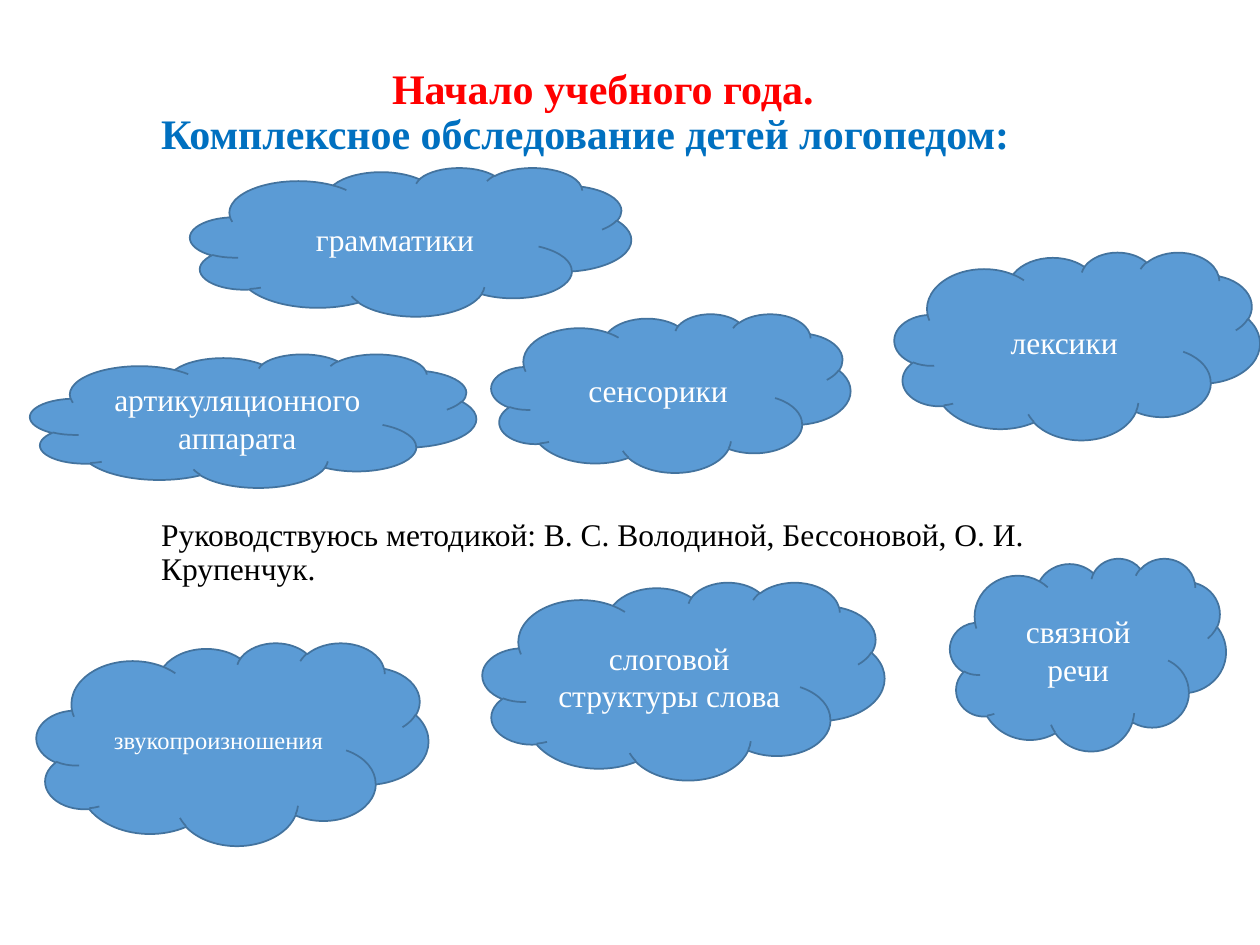
import pptx
import pptx.util
from pptx.dml.color import RGBColor
from pptx.enum.shapes import MSO_SHAPE
from pptx.enum.text import MSO_ANCHOR, PP_ALIGN

PX = 9144  # EMU per px, 100 px to the inch


class Theme:
    font = "Times New Roman"
    cloud_fill = "5B9BD5"
    cloud_line = "43739E"
    cloud_text = "FFFFFF"
    season = "FF0000"
    survey = "0070C0"
    body = "000000"
    heading_size = 24
    text_size = 18
    small_size = 14
    line_spacing = 0.9


def emu(box):
    return [length * PX for length in box]


def write(paragraph, text, size, color, bold=False, **layout):
    run = paragraph.add_run()
    run.text = text
    style = {"name": Theme.font, "size": pptx.util.Pt(size), "bold": bold}
    for key, value in style.items():
        setattr(run.font, key, value)
    run.font.color.rgb = RGBColor.from_string(color)
    for key, value in layout.items():
        setattr(paragraph, key, value)


def text_frame(slide, box):
    frame = slide.shapes.add_textbox(*emu(box)).text_frame
    frame.word_wrap = True
    return frame


def add_heading(slide, box):
    frame = text_frame(slide, box)
    write(frame.paragraphs[0], "Начало учебного года.", Theme.heading_size,
          Theme.season, True, alignment=PP_ALIGN.CENTER,
          line_spacing=Theme.line_spacing)
    write(frame.add_paragraph(), "Комплексное обследование детей логопедом:",
          Theme.heading_size, Theme.survey, True,
          line_spacing=Theme.line_spacing)


def add_method(slide, box):
    write(text_frame(slide, box).paragraphs[0],
          "Руководствуюсь методикой: В. С. Володиной, Бессоновой, "
          "О. И. Крупенчук.", Theme.text_size, Theme.body,
          line_spacing=Theme.line_spacing)


def add_cloud(slide, box, skill, size=Theme.text_size):
    cloud = slide.shapes.add_shape(MSO_SHAPE.CLOUD, *emu(box))
    cloud.shadow.inherit = False
    cloud.fill.solid()
    cloud.fill.fore_color.rgb = RGBColor.from_string(Theme.cloud_fill)
    cloud.line.color.rgb = RGBColor.from_string(Theme.cloud_line)
    cloud.line.width = pptx.util.Pt(1)
    cloud.text_frame.word_wrap = True
    cloud.text_frame.vertical_anchor = MSO_ANCHOR.MIDDLE
    write(cloud.text_frame.paragraphs[0], skill, size, Theme.cloud_text,
          alignment=PP_ALIGN.CENTER)


def main():
    deck = pptx.Presentation()
    deck.slide_width, deck.slide_height = emu((1000, 750))
    slide = deck.slides.add_slide(deck.slide_layouts[6])

    add_heading(slide, (118, 49, 721, 80))
    add_method(slide, (118, 407, 812, 62))

    skills = [
        ((24, 281, 354, 106), "артикуляционного аппарата"),
        ((390, 249, 285, 126), "сенсорики"),
        ((383, 462, 319, 157), "слоговой структуры слова"),
        ((710, 200, 290, 149), "лексики"),
        ((151, 133, 350, 118), "грамматики"),
        ((754, 443, 219, 153), "связной речи"),
        ((29, 510, 311, 161), "звукопроизношения", Theme.small_size),
    ]
    for skill in skills:
        add_cloud(slide, *skill)

    deck.save("out.pptx")


if __name__ == "__main__":
    main()
